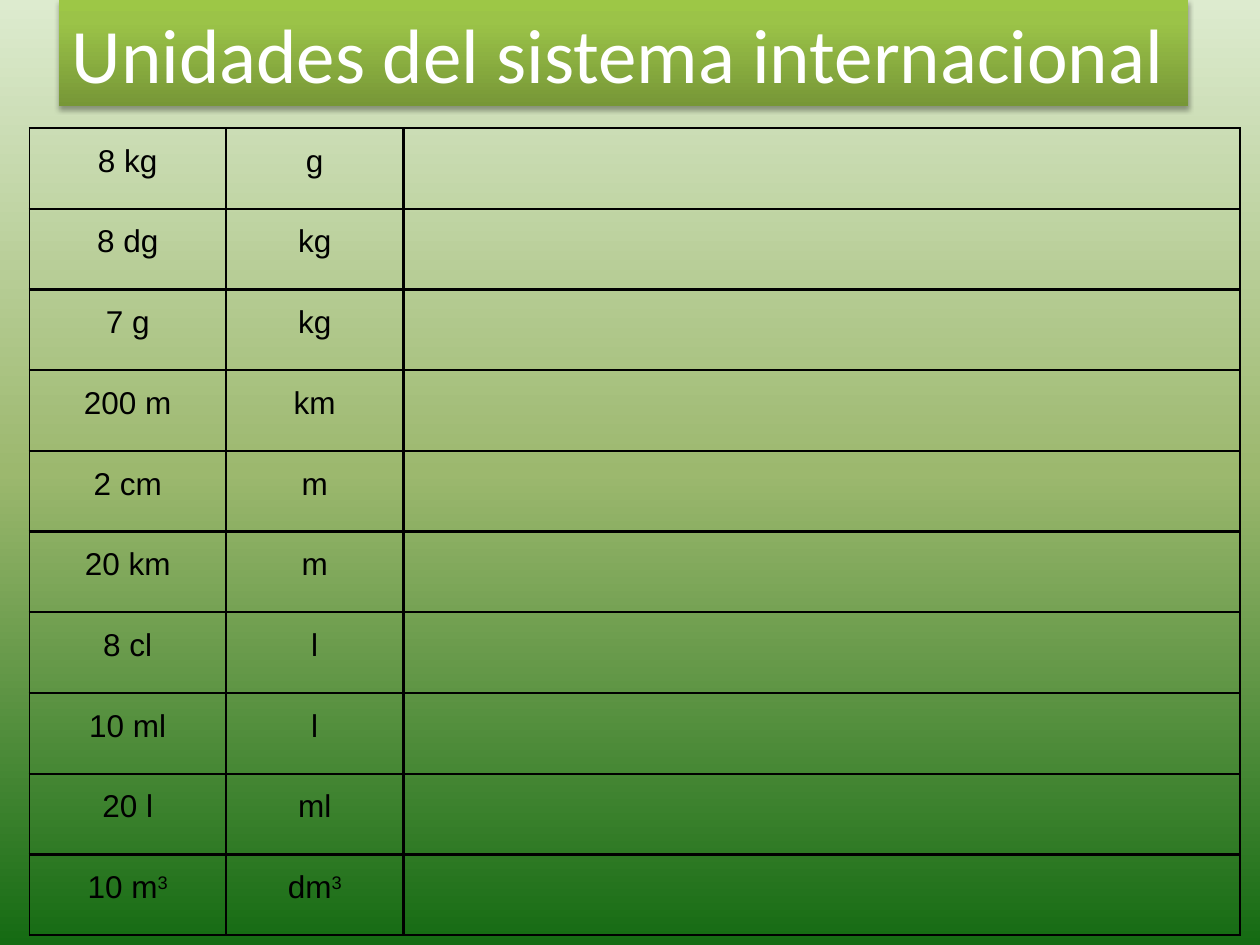
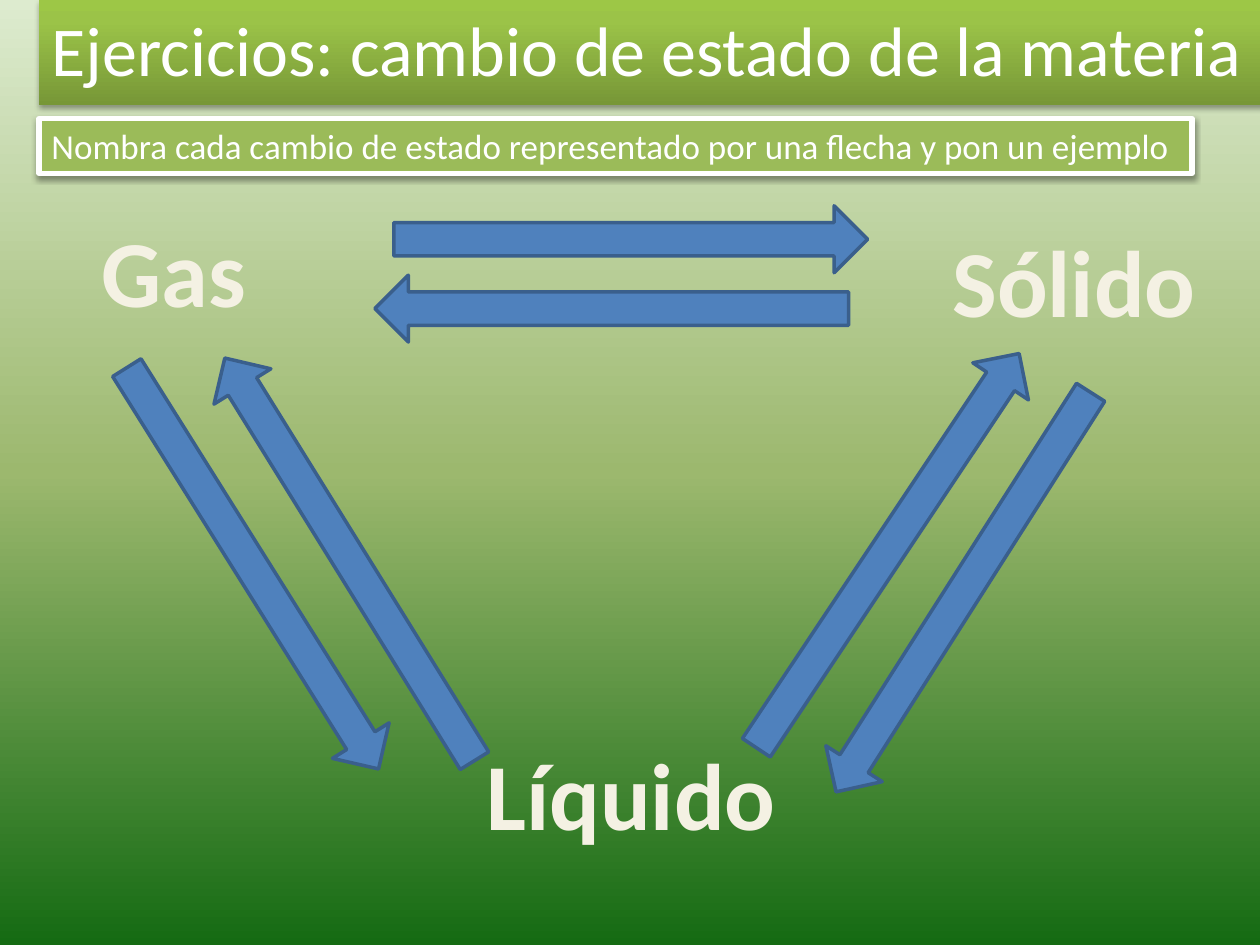
from lxml import etree
from pptx import Presentation
from pptx.dml.color import RGBColor
from pptx.enum.shapes import MSO_SHAPE
from pptx.enum.text import MSO_ANCHOR, MSO_AUTO_SIZE, PP_ALIGN
from pptx.oxml.ns import qn
from pptx.util import Pt

RECTANGLE, UP_ARROW = MSO_SHAPE.RECTANGLE, MSO_SHAPE.UP_ARROW
TOP, MIDDLE = MSO_ANCHOR.TOP, MSO_ANCHOR.MIDDLE
LEFT, CENTER = PP_ALIGN.LEFT, PP_ALIGN.CENTER
GROW = MSO_AUTO_SIZE.SHAPE_TO_FIT_TEXT
TITLE_ONLY = 5

BACKGROUND = [(0, "DDEBCF"), (50, "9CB86E"), (100, "156B13")]
TITLE_BAND = [(0, "779737"), (80, "9BC348"), (100, "9DC746")]
WHITE, BLACK = "FFFFFF", "000000"
BANNER_GREEN = "9BBB59"
ARROW_BLUE, ARROW_EDGE = "4F81BD", "3A5F8C"
STATE_CREAM, STATE_EDGE = "F4F1E3", "054697"
ARROW_WIDTH, ARROW_LENGTH = 38.2, 270.7

CONVERSIONS = [
    ("8 kg", "g"), ("8 dg", "kg"), ("7 g", "kg"), ("200 m", "km"),
    ("2 cm", "m"), ("20 km", "m"), ("8 cl", "l"), ("10 ml", "l"),
    ("20 l", "ml"), ("10 m^3", "dm^3"),
]
STATES = [
    ("Gas ", 50.4, 118, 110.2),
    ("Sólido ", 536.4, 123.8, 167),
    ("Líquido ", 270, 416.9, 193.7),
]
# left, top, rotation
ARROWS = [
    (125.3, 189.4, 147.9), (180.7, 184.3, 328.2),
    (488.2, 179.3, 33.7), (531.4, 203, 212.5),
    (330.5, 41, 270), (341.3, 1.4, 90),
]


def color(hex_value):
    return RGBColor.from_string(hex_value)


def add_xml(parent, tag, **attributes):
    return etree.SubElement(parent, qn(tag),
                            {name: str(value) for name, value in attributes.items()})


def add_solid(parent, hex_value):
    return add_xml(add_xml(parent, "a:solidFill"), "a:srgbClr", val=hex_value)


def apply_gradient(fill, owner, stops, angle):
    """Fill with any number of stops; the angle runs counter-clockwise."""
    fill.gradient()
    fill.gradient_angle = angle
    stop_list = next(owner.iter(qn("a:gsLst")))
    for stop in list(stop_list):
        stop_list.remove(stop)
    for position, hex_value in stops:
        stop = add_xml(stop_list, "a:gs", pos=position * 1000)
        add_xml(stop, "a:srgbClr", val=hex_value)


def apply_shadow(shape, opacity, distance):
    shape.shadow.inherit = False
    effects = next(shape.element.iter(qn("a:effectLst")))
    shadow = add_xml(effects, "a:outerShdw", blurRad=Pt(3.15), dist=Pt(distance),
                     dir=90 * 60000, rotWithShape=0)
    add_xml(add_xml(shadow, "a:srgbClr", val=BLACK), "a:alpha", val=opacity * 1000)


def border_cell(cell, widths):
    """Draw black borders, with widths given as left, right, top, bottom."""
    properties = cell._tc.get_or_add_tcPr()
    for index, (side, width) in enumerate(zip("LRTB", widths)):
        line = add_xml(properties, f"a:ln{side}", w=Pt(width))
        add_solid(line, BLACK)
        properties.insert(index, line)


class SlideBuilder:
    """Holds the deck, its shared style and the slide being filled."""

    def __init__(self):
        self.deck = Presentation()
        self.deck.slide_width, self.deck.slide_height = Pt(720), Pt(540)
        master = self.deck.slide_master
        apply_gradient(master.background.fill, master.element, BACKGROUND, 270)
        self.slide = None

    def set_font(self, paragraph, size, hex_value, name="Calibri", bold=False):
        font = paragraph.font
        font.name, font.size, font.bold = name, Pt(size), bold
        font.color.rgb = color(hex_value)

    def write_line(self, shape, text, size, hex_value, align=LEFT, bold=False):
        """Write one unwrapped line in a shape that fits its text."""
        frame = shape.text_frame
        frame.text = text
        frame.word_wrap, frame.auto_size = False, GROW
        frame.vertical_anchor = TOP
        paragraph = frame.paragraphs[0]
        paragraph.alignment = align
        self.set_font(paragraph, size, hex_value, bold=bold)
        return paragraph

    def start_slide(self, title, left, width, height, size):
        self.slide = self.deck.slides.add_slide(self.deck.slide_layouts[TITLE_ONLY])
        band = self.slide.shapes.title
        band.left, band.top, band.width, band.height = map(Pt, (left, 0, width, height))
        apply_gradient(band.fill, band.element, TITLE_BAND, 90)
        apply_shadow(band, 35, 1.8)
        self.write_line(band, title, size, WHITE)

    def add_banner(self, text, left, top, width, height):
        banner = self.slide.shapes.add_shape(
            RECTANGLE, *map(Pt, (left, top, width, height)))
        banner.fill.solid()
        banner.fill.fore_color.rgb = color(BANNER_GREEN)
        banner.line.color.rgb = color(WHITE)
        banner.line.width = Pt(3)
        apply_shadow(banner, 38, 1.6)
        self.write_line(banner, text, 20, WHITE)

    def add_state(self, name, left, top, width):
        box = self.slide.shapes.add_textbox(*map(Pt, (left, top, width, 72.7)))
        paragraph = self.write_line(box, name, 54, STATE_CREAM, CENTER, bold=True)
        properties = paragraph.runs[0]._r.get_or_add_rPr()
        add_solid(add_xml(properties, "a:ln", w=Pt(1)), STATE_EDGE)

    def add_arrow(self, left, top, rotation):
        arrow = self.slide.shapes.add_shape(
            UP_ARROW, *map(Pt, (left, top, ARROW_WIDTH, ARROW_LENGTH)))
        arrow.rotation = rotation
        arrow.shadow.inherit = False
        arrow.fill.solid()
        arrow.fill.fore_color.rgb = color(ARROW_BLUE)
        arrow.line.color.rgb = color(ARROW_EDGE)
        arrow.line.width = Pt(2)

    def write_quantity(self, cell, text):
        """Write a quantity; what follows ^ is raised."""
        cell.vertical_anchor = MIDDLE
        cell.margin_left = cell.margin_right = Pt(3.6)
        cell.margin_top = cell.margin_bottom = 0
        paragraph = cell.text_frame.paragraphs[0]
        paragraph.alignment = CENTER
        paragraph.line_spacing = Pt(12)
        paragraph.space_before = paragraph.space_after = Pt(6)
        self.set_font(paragraph, 18, BLACK, "Arial")
        base, _, exponent = text.partition("^")
        paragraph.add_run().text = base
        if exponent:
            span = paragraph.add_run()
            span.text = exponent
            span._r.get_or_add_rPr().set("baseline", "30000")

    def add_conversion_table(self, rows, left, top, column_widths, row_height):
        last_row, last_column = len(rows) - 1, len(column_widths) - 1
        table = self.slide.shapes.add_table(
            len(rows), len(column_widths), Pt(left), Pt(top),
            Pt(sum(column_widths)), Pt(row_height * len(rows))).table
        table.first_row = table.horz_banding = False
        for column, width in zip(table.columns, column_widths):
            column.width = Pt(width)
        for row_index, quantities in enumerate(rows):
            table.rows[row_index].height = Pt(row_height)
            for column_index in range(len(column_widths)):
                cell = table.cell(row_index, column_index)
                cell.fill.background()
                on_edge = (column_index == 0, column_index == last_column,
                           row_index == 0, row_index == last_row)
                border_cell(cell, [1 if edge else 1.5 for edge in on_edge])
                if column_index < len(quantities):
                    self.write_quantity(cell, quantities[column_index])


def main():
    builder = SlideBuilder()

    builder.start_slide("Unidades del sistema internacional", 33.8, 645.1, 60.5, 44)
    builder.add_conversion_table(CONVERSIONS, 16.8, 73.2, (112.3, 101.5, 478.1), 46.13)

    builder.start_slide("Ejercicios: cambio de estado de la materia",
                        22.3, 717.1, 55.4, 40)
    for state in STATES:
        builder.add_state(*state)
    for arrow in ARROWS:
        builder.add_arrow(*arrow)
    builder.add_banner(
        "Nombra cada cambio de estado representado por una flecha y pon un ejemplo",
        22.3, 67.7, 658.8, 31.5)

    builder.deck.save("out.pptx")


if __name__ == "__main__":
    main()
